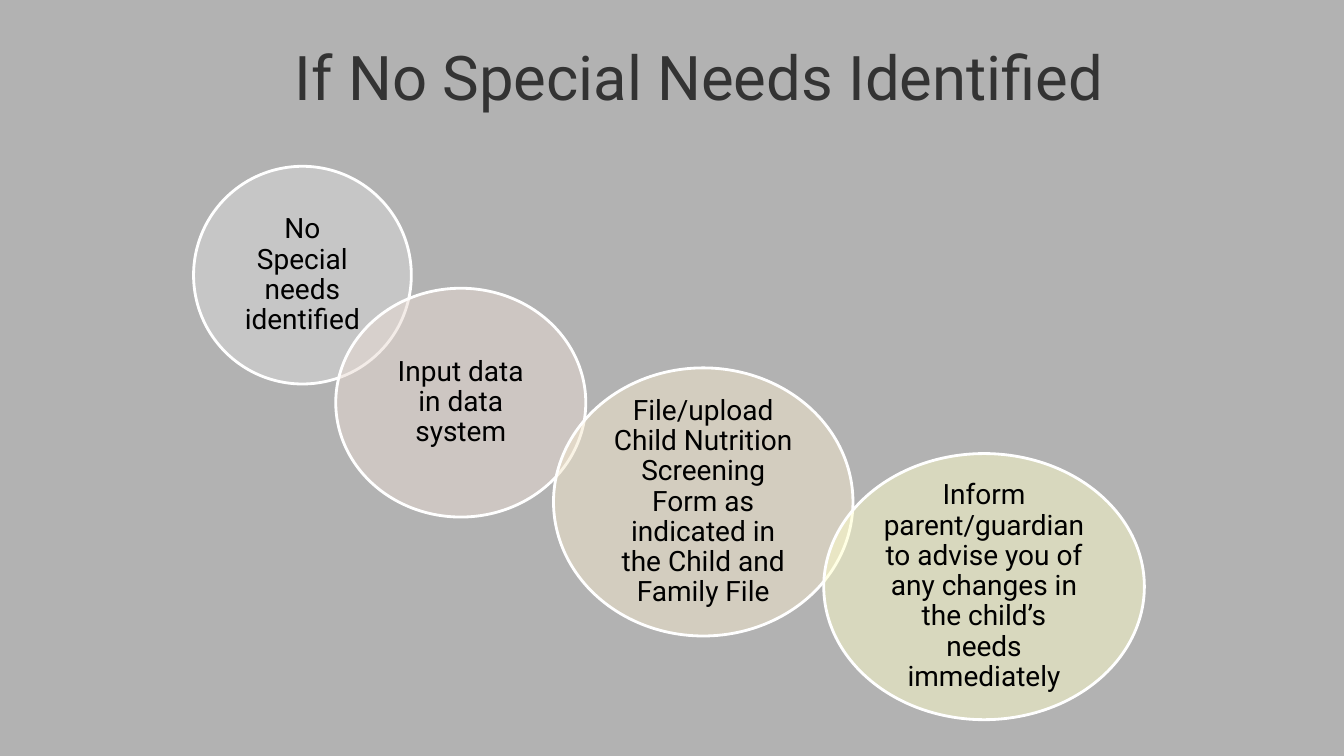
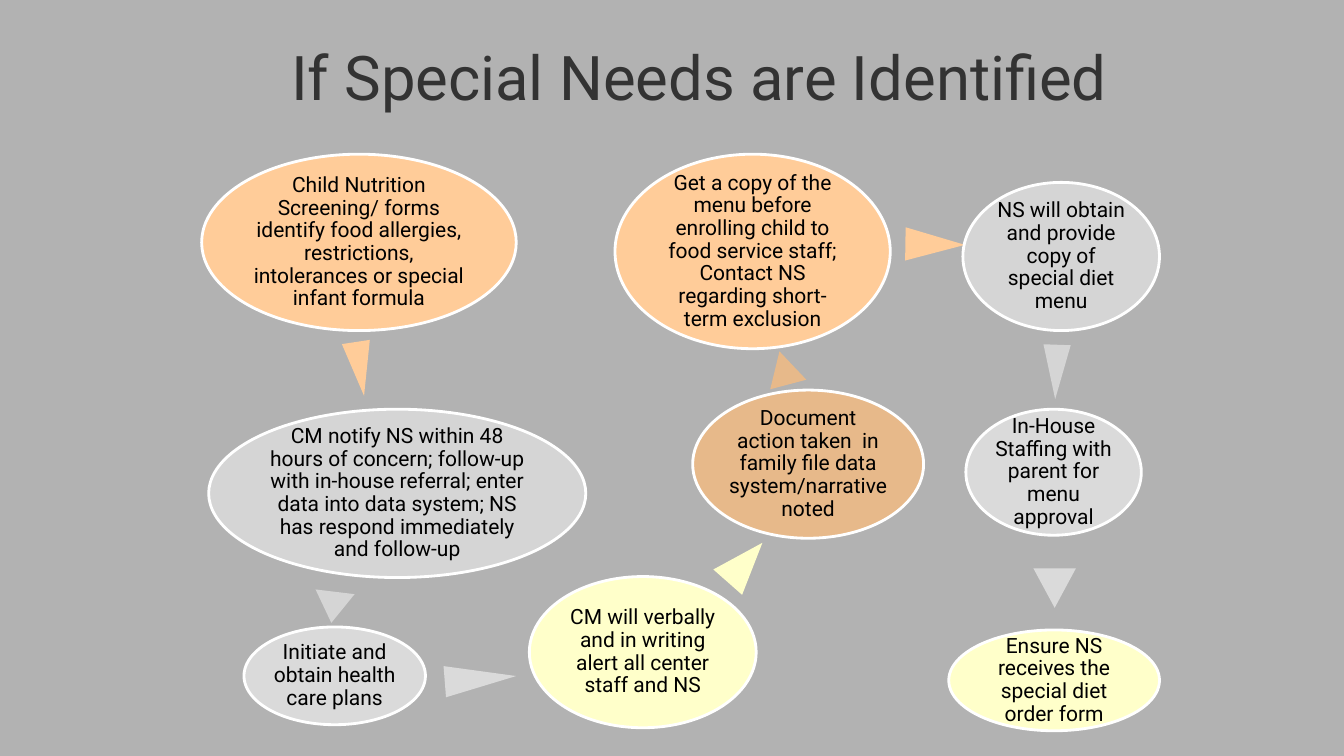
"""Build two slides on the steps that follow a nutrition screening."""
import pptx
import pptx.dml.color
import pptx.enum.shapes
import pptx.enum.text
import pptx.oxml.ns
import pptx.util
from lxml import etree

PX = 9144
FONT = "Roboto"
TITLE_BOX = (133, 17, 1122, 117)
CHAIN_BOX = (192, 165, 943, 549)
FLOW_BOX = (200, 153, 950, 572)
COLORS = {
    "background": "B2B2B2",
    "title": "333333",
    "text": "000000",
    "outline": "FFFFFF",
    "silver": "D5D5D5",
    "light": "DADADA",
    "rose": "E9DAD2",
    "sand": "F5E8CD",
    "cream": "FFFFCA",
    "peach": "FFCC99",
    "tan": "E7B98A",
}

CHAIN = [
    ("No Special needs identified", (0, 0, 216, 216), "light"),
    ("Input data in data system", (141, 121, 248, 227), "rose"),
    ("File/upload Child Nutrition Screening Form as indicated in "
     "the Child and Family File", (357, 200, 297, 266), "sand"),
    ("Inform parent/guardian to advise you of any changes in the "
     "child’s needs immediately", (625, 285, 318, 264), "cream"),
]

FLOW = [
    ("Child Nutrition Screening/ forms identify food allergies, "
     "restrictions, intolerances or special infant formula",
     (0, 0, 312, 175), "peach", (143, 186, 28, 54), 171.4),
    ("CM notify NS within 48 hours of concern; follow-up with in-house "
     "referral; enter data into data system; NS has respond immediately "
     "and follow-up",
     (7, 253, 374, 167), "silver", (111, 434, 39, 31), 186.9),
    ("Initiate and obtain health care plans",
     (42, 469, 180, 97), "light", (261, 485, 31, 71), 85.5),
    ("CM will verbally and in writing alert all center staff and NS",
     (325, 419, 225, 150), "cream", (520, 379, 38, 52), 41.4),
    ("Document action taken  in family file data system/narrative noted",
     (487, 234, 229, 147), "tan", (559, 195, 37, 34), 345.1),
    ("Get a copy of the menu before enrolling child to food service staff; "
     "Contact NS regarding short-term exclusion",
     (410, 0, 273, 193), "peach", (711, 60, 33, 59), 90.9),
    ("NS will obtain and provide copy of special diet menu",
     (755, 28, 195, 147), "silver", (834, 189, 27, 54), 182),
    ("In-House Staffing with parent for menu approval",
     (758, 253, 174, 125), "light", (825, 411, 42, 39), 180),
    ("Ensure NS receives the special diet order form",
     (741, 472, 209, 100), "cream", None, 0),
]


def rgb(name):
    """Return the named colour."""
    return pptx.dml.color.RGBColor.from_string(COLORS[name])


def place(box, origin=(0, 0)):
    """Turn a px box, measured from an origin, into EMU."""
    x, y, w, h = box
    return [v * PX for v in (origin[0] + x, origin[1] + y, w, h)]


def add_solid(s, kind, box, origin, color):
    """Add a filled shape without outline or shadow."""
    sp = s.shapes.add_shape(kind, *place(box, origin))
    sp.shadow.inherit = False
    sp.fill.solid()
    sp.fill.fore_color.rgb = rgb(color)
    sp.line.fill.background()
    return sp


def set_text(tf, text, size, color):
    """Write one centred paragraph in the middle of a frame."""
    tf.text = text
    tf.word_wrap = True
    tf.auto_size = pptx.enum.text.MSO_AUTO_SIZE.NONE
    tf.vertical_anchor = pptx.enum.text.MSO_ANCHOR.MIDDLE
    p = tf.paragraphs[0]
    p.alignment = pptx.enum.text.PP_ALIGN.CENTER
    for r in p.runs:
        r.font.name = FONT
        r.font.size = pptx.util.Pt(size)
        r.font.color.rgb = rgb(color)
    return p


def add_step(s, text, box, origin, color, size, insets):
    """Add an outlined ellipse holding one step."""
    sp = add_solid(s, pptx.enum.shapes.MSO_SHAPE.OVAL, box, origin, color)
    sp.line.color.rgb = rgb("outline")
    sp.line.width = pptx.util.Pt(2)
    tf = sp.text_frame
    tf.margin_left = tf.margin_right = insets[0] * PX
    tf.margin_top = tf.margin_bottom = insets[1] * PX
    set_text(tf, text, size, "text").line_spacing = 0.9
    return sp


def set_alpha(sp, percent):
    """Make the fill of a shape partly transparent."""
    qn = pptx.oxml.ns.qn
    clr = sp.fill._xPr.find(qn("a:solidFill")).find(qn("a:srgbClr"))
    etree.SubElement(clr, qn("a:alpha")).set("val", str(percent * 1000))


def add_chain(s, box):
    """Draw the overlapping translucent steps inside a box."""
    for text, oval, color in CHAIN:
        set_alpha(add_step(s, text, oval, box, color, 20, (12, 3)), 50)


def add_flow(s, box):
    """Draw the steps and the triangles that lead onward inside a box."""
    for text, oval, color, pointer, angle in FLOW:
        add_step(s, text, oval, box, color, 15, (2, 2))
        if pointer:
            triangle = pptx.enum.shapes.MSO_SHAPE.ISOSCELES_TRIANGLE
            add_solid(s, triangle, pointer, box, color).rotation = angle


def add_slide(prs, title):
    """Add a title-only slide with the shared title style."""
    s = prs.slides.add_slide(prs.slide_layouts[5])
    sp = s.shapes.title
    sp.left, sp.top, sp.width, sp.height = place(TITLE_BOX)
    set_text(sp.text_frame, title, 44, "title")
    return s


def main():
    """Build and save the presentation."""
    prs = pptx.Presentation()
    prs.slide_width = pptx.util.Emu(1333 * PX)
    prs.slide_height = pptx.util.Emu(750 * PX)
    fill = prs.slide_master.background.fill
    fill.solid()
    fill.fore_color.rgb = rgb("background")
    add_chain(add_slide(prs, "If No Special Needs Identified"), CHAIN_BOX)
    add_flow(add_slide(prs, "If Special Needs are Identified"), FLOW_BOX)
    prs.save("out.pptx")


if __name__ == "__main__":
    main()
